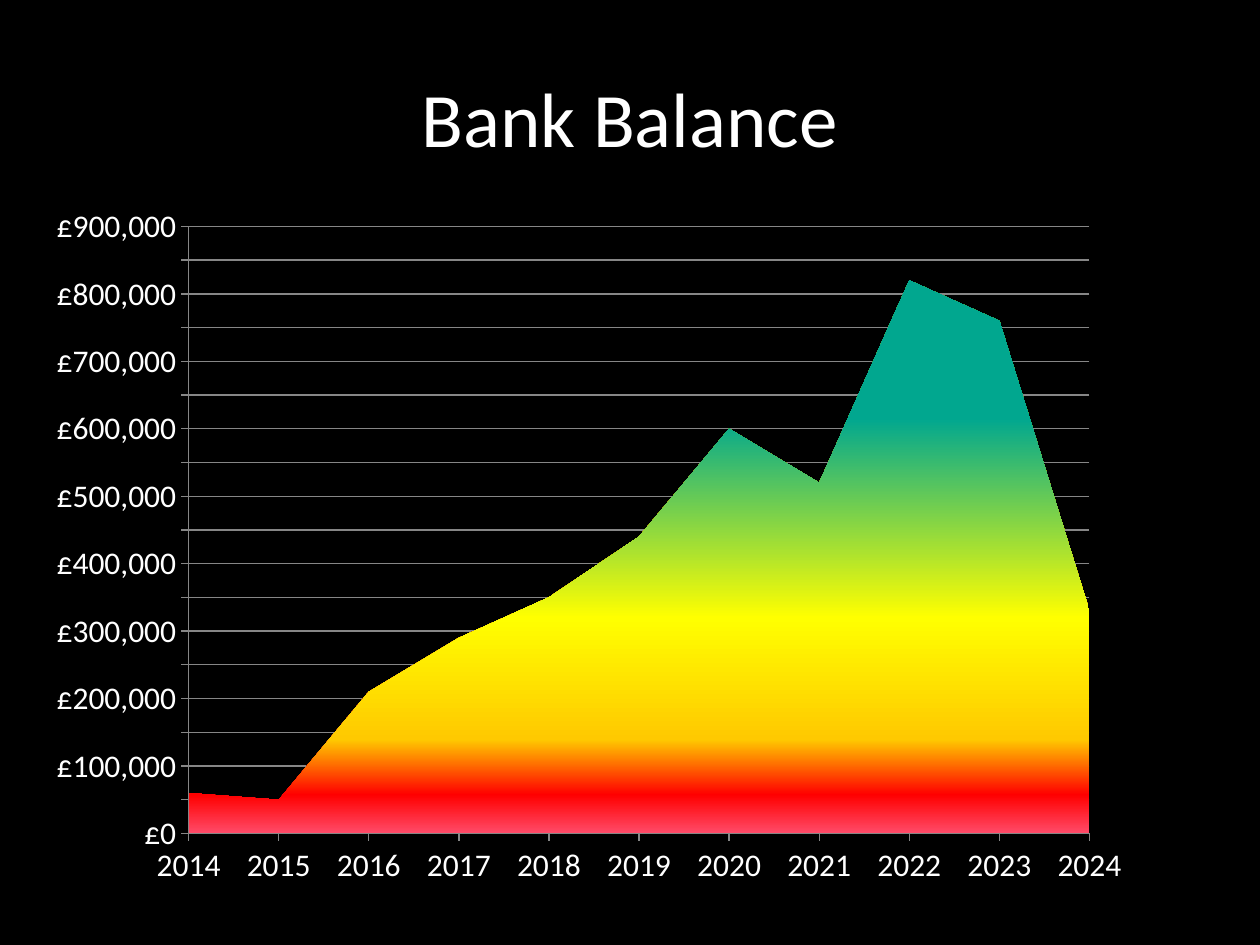
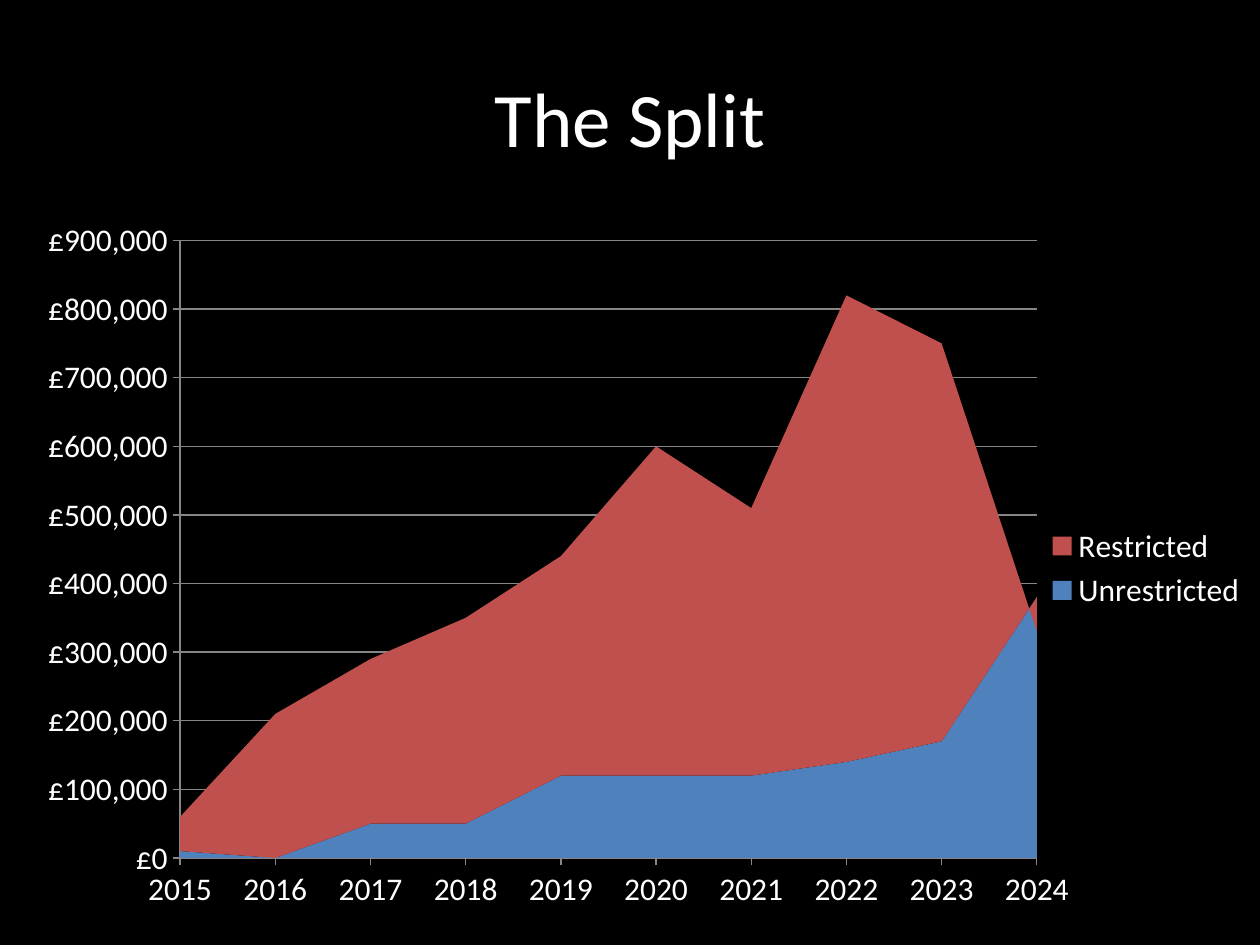
from copy import deepcopy
from dataclasses import dataclass

from lxml import etree
from pptx import Presentation
from pptx.chart.chart import Chart
from pptx.chart.data import CategoryChartData
from pptx.chart.series import AreaSeries
from pptx.dml.color import RGBColor
from pptx.enum.chart import XL_CHART_TYPE, XL_LEGEND_POSITION, XL_TICK_MARK
from pptx.enum.text import MSO_ANCHOR, PP_ALIGN
from pptx.oxml.ns import qn
from pptx.presentation import Presentation as Deck
from pptx.slide import Slide
from pptx.util import Inches, Pt

AREA_STACKED = XL_CHART_TYPE.AREA_STACKED
LEGEND_RIGHT = XL_LEGEND_POSITION.RIGHT
TICK_OUTSIDE = XL_TICK_MARK.OUTSIDE
TICK_NONE = XL_TICK_MARK.NONE
MIDDLE = MSO_ANCHOR.MIDDLE
CENTER = PP_ALIGN.CENTER
TITLE_ONLY = 5


@dataclass(frozen=True)
class Theme:
    font: str = "Calibri"
    background: str = "000000"
    text: str = "FFFFFF"
    axis_line: str = "868686"
    unrestricted: str = "4F81BD"
    restricted: str = "C0504D"
    balance_stops: tuple[tuple[float, str], ...] = (
        (0, "FF4B69"),
        (0.07, "FF0000"),
        (0.17, "FFC900"),
        (0.39, "FFFF00"),
        (0.75, "01A78F"),
    )
    title_size: int = 44
    chart_size: int = 18
    line_width: float = 0.75
    currency: str = '"£"#,##0'


THEME = Theme()


@dataclass(frozen=True)
class Box:
    left: float
    top: float
    width: float
    height: float


@dataclass(frozen=True)
class Band:
    name: str
    thousands: tuple[int, ...]
    fill: str | tuple[tuple[float, str], ...]


@dataclass(frozen=True)
class ChartSlide:
    title: str
    box: Box
    plot: Box
    first_year: int
    bands: tuple[Band, ...]
    major_unit: int
    legend: bool = False


TITLE_BOX = Box(0.5, 0.3, 9, 1.25)
AXIS_MAXIMUM = 900_000

SLIDES = (
    ChartSlide(
        title="Bank Balance",
        box=Box(0.2, 1.47, 9.61, 5.75),
        plot=Box(0.135, 0.057, 0.744, 0.838),
        first_year=2014,
        bands=(
            Band(
                "Series 1",
                (60, 50, 210, 290, 350, 440, 600, 520, 820, 760, 330),
                THEME.balance_stops,
            ),
        ),
        major_unit=50_000,
    ),
    ChartSlide(
        title="The Split",
        box=Box(0, 1.62, 10, 5.78),
        plot=Box(0.143, 0.05, 0.68, 0.848),
        first_year=2015,
        bands=(
            Band(
                "Unrestricted",
                (10, 0, 50, 50, 120, 120, 120, 140, 170, 380),
                THEME.unrestricted,
            ),
            Band(
                "Restricted",
                (50, 210, 240, 300, 320, 480, 390, 680, 580, -50),
                THEME.restricted,
            ),
        ),
        major_unit=100_000,
        legend=True,
    ),
)


def color(value: str) -> RGBColor:
    return RGBColor.from_string(value)


def lengths(box: Box) -> tuple[Inches, ...]:
    return tuple(Inches(v) for v in (box.left, box.top, box.width, box.height))


def add_title(slide: Slide, text: str) -> None:
    title = slide.shapes.title
    title.left, title.top, title.width, title.height = lengths(TITLE_BOX)
    title.text_frame.vertical_anchor = MIDDLE
    paragraph = title.text_frame.paragraphs[0]
    paragraph.alignment = CENTER
    run = paragraph.add_run()
    run.text = text
    run.font.name = THEME.font
    run.font.size = Pt(THEME.title_size)
    run.font.color.rgb = color(THEME.text)


def fill_series(series: AreaSeries, band: Band) -> None:
    series.format.line.fill.background()
    fill = series.format.fill
    if isinstance(band.fill, str):
        fill.solid()
        fill.fore_color.rgb = color(band.fill)
        return
    fill.gradient()
    fill.gradient_angle = 90
    stop_list = next(series._element.iter(qn("a:gsLst")))
    while len(stop_list) < len(band.fill):
        stop_list.append(deepcopy(stop_list[0]))
    for stop, (position, value) in zip(fill.gradient_stops, band.fill):
        stop.position = position
        stop.color.rgb = color(value)


def place_plot(chart: Chart, plot: Box) -> None:
    plot_area = next(chart._chartSpace.iter(qn("c:plotArea")))
    for previous in plot_area.findall(qn("c:layout")):
        plot_area.remove(previous)
    layout = etree.Element(qn("c:layout"))
    plot_area.insert(0, layout)
    manual = etree.SubElement(layout, qn("c:manualLayout"))
    settings = {
        "layoutTarget": "inner",
        "xMode": "edge",
        "yMode": "edge",
        "x": plot.left,
        "y": plot.top,
        "w": plot.width,
        "h": plot.height,
    }
    for tag, value in settings.items():
        etree.SubElement(manual, qn(f"c:{tag}")).set("val", str(value))


def format_axes(chart: Chart, major_unit: int) -> None:
    category_axis, value_axis = chart.category_axis, chart.value_axis
    category_axis.has_major_gridlines = False
    value_axis.has_major_gridlines = True
    value_axis.minimum_scale = 0
    value_axis.maximum_scale = AXIS_MAXIMUM
    value_axis.major_unit = major_unit
    for axis in (category_axis, value_axis):
        axis.major_tick_mark = TICK_OUTSIDE
        axis.minor_tick_mark = TICK_NONE
    value_axis.tick_labels.number_format = THEME.currency
    value_axis.tick_labels.number_format_is_linked = False
    for part in (category_axis, value_axis, value_axis.major_gridlines):
        part.format.line.color.rgb = color(THEME.axis_line)
        part.format.line.width = Pt(THEME.line_width)
    for crossing in chart._chartSpace.iter(qn("c:crossBetween")):
        crossing.set("val", "midCat")


def add_area_chart(slide: Slide, content: ChartSlide) -> None:
    data = CategoryChartData(number_format=THEME.currency)
    year_count = len(content.bands[0].thousands)
    data.categories = [str(content.first_year + i) for i in range(year_count)]
    for band in content.bands:
        data.add_series(band.name, [value * 1000 for value in band.thousands])
    chart = slide.shapes.add_chart(AREA_STACKED, *lengths(content.box), data).chart
    chart.has_title = False
    chart.font.name = THEME.font
    chart.font.size = Pt(THEME.chart_size)
    chart.font.color.rgb = color(THEME.text)
    chart.has_legend = content.legend
    if content.legend:
        chart.legend.position = LEGEND_RIGHT
        chart.legend.include_in_layout = False
    chart.plots[0].vary_by_categories = False
    for series, band in zip(chart.plots[0].series, content.bands):
        fill_series(series, band)
    format_axes(chart, content.major_unit)
    place_plot(chart, content.plot)


def add_chart_slide(presentation: Deck, content: ChartSlide) -> None:
    slide = presentation.slides.add_slide(presentation.slide_layouts[TITLE_ONLY])
    add_title(slide, content.title)
    add_area_chart(slide, content)


def main() -> None:
    presentation = Presentation()
    presentation.slide_width = Inches(10)
    presentation.slide_height = Inches(7.5)
    background = presentation.slide_master.background.fill
    background.solid()
    background.fore_color.rgb = color(THEME.background)
    for content in SLIDES:
        add_chart_slide(presentation, content)
    presentation.save("out.pptx")


if __name__ == "__main__":
    main()
